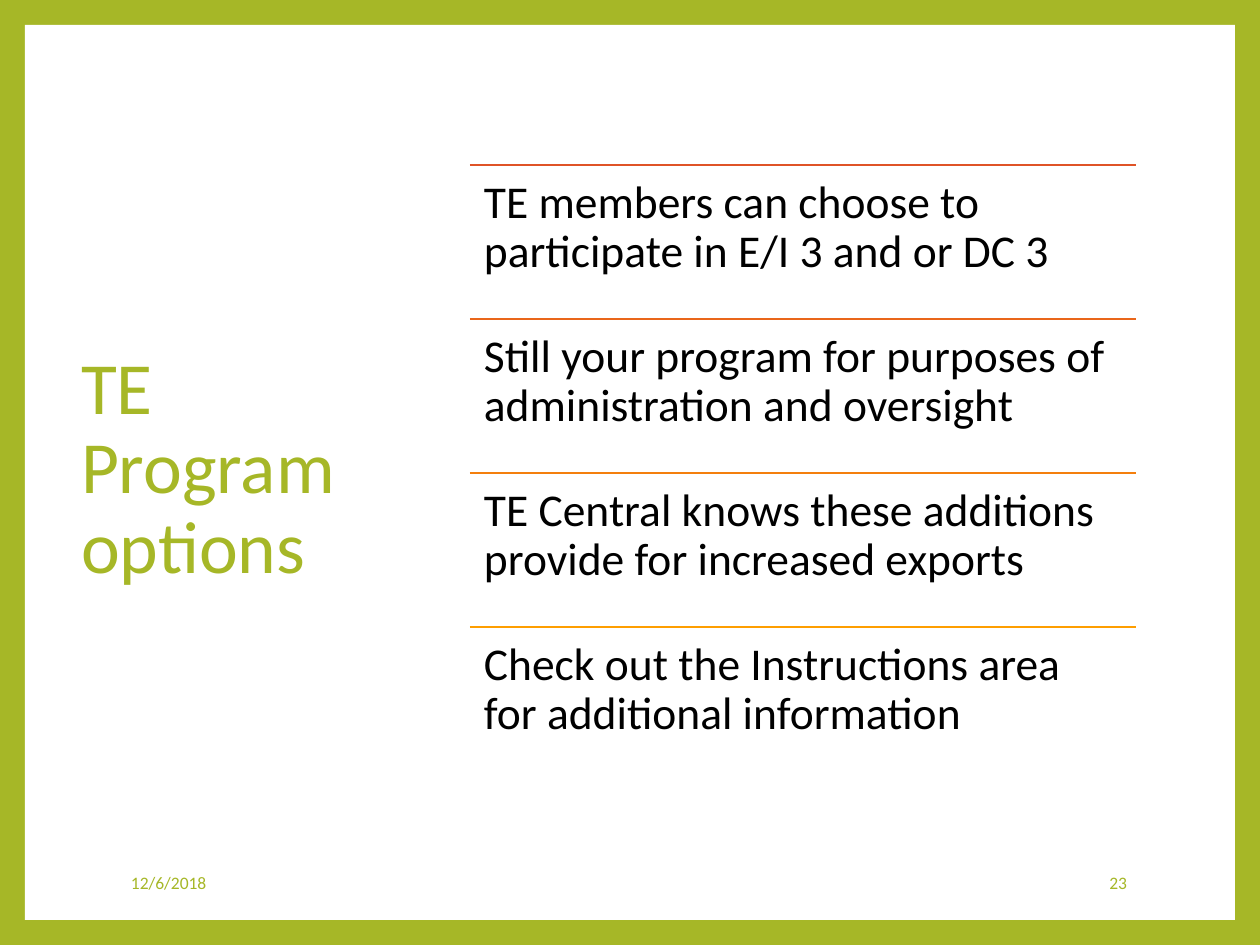
from dataclasses import dataclass

from lxml import etree
from pptx import Presentation
from pptx.dml.color import RGBColor
from pptx.enum.shapes import MSO_CONNECTOR, MSO_SHAPE
from pptx.enum.text import MSO_ANCHOR, MSO_AUTO_SIZE, PP_ALIGN
from pptx.oxml.ns import qn
from pptx.util import Pt

STRAIGHT = MSO_CONNECTOR.STRAIGHT
RECTANGLE = MSO_SHAPE.RECTANGLE
TOP, MIDDLE = MSO_ANCHOR.TOP, MSO_ANCHOR.MIDDLE
LEFT, RIGHT = PP_ALIGN.LEFT, PP_ALIGN.RIGHT
NO_AUTOFIT = MSO_AUTO_SIZE.NONE
TITLE_ONLY = 5
EMU_PER_PX = 914400 / 126


@dataclass(frozen=True)
class Theme:
    font: str = "Calibri"
    green: str = "A6B727"
    white: str = "FFFFFF"
    black: str = "000000"
    title_size: int = 42
    option_size: int = 26
    footer_size: int = 10
    rule_width: float = 1.5


THEME = Theme()

OPTIONS = (
    ("DF5327", "TE members can choose to participate in E/I 3 and or DC 3"),
    ("E9661A", "Still your program for purposes of administration and oversight"),
    ("F47F0D", "TE Central knows these additions provide for increased exports"),
    ("FE9E00", "Check out the Instructions area for additional information"),
)
OPTIONS_LEFT, OPTIONS_TOP, OPTIONS_WIDTH = 470, 165, 666
OPTION_HEIGHT = 154


def px(length):
    return round(length * EMU_PER_PX)


def color(value):
    return RGBColor.from_string(value)


def write_text(box, text, size, ink, anchor=MIDDLE, align=LEFT, inset=13,
               line_spacing=1.0, space_after=0):
    frame = box.text_frame
    frame.word_wrap = True
    frame.auto_size = NO_AUTOFIT
    frame.vertical_anchor = anchor
    frame.margin_left = frame.margin_right = px(inset)
    frame.margin_top = frame.margin_bottom = px(inset if anchor == TOP else 6)
    para = frame.paragraphs[0]
    para.alignment = align
    para.line_spacing = line_spacing
    para.space_after = Pt(space_after)
    span = para.add_run()
    span.text = text
    span.font.name = THEME.font
    span.font.size = Pt(size)
    span.font.color.rgb = color(ink)


def add_text(page, left, top, width, height, *content, **layout):
    box = page.shapes.add_textbox(px(left), px(top), px(width), px(height))
    write_text(box, *content, **layout)


def add_rule(page, left, top, width, ink):
    rule = page.shapes.add_connector(
        STRAIGHT, px(left), px(top), px(left + width), px(top))
    rule.line.color.rgb = color(ink)
    rule.line.width = Pt(THEME.rule_width)
    etree.SubElement(rule._element.spPr, qn("a:effectLst"))


def add_frame(page):
    """Green background with a white panel behind everything else."""
    background = page.background.fill
    background.solid()
    background.fore_color.rgb = color(THEME.green)
    panel = page.shapes.add_shape(RECTANGLE, px(25), px(25), px(1210), px(895))
    panel.shadow.inherit = False
    panel.fill.solid()
    panel.fill.fore_color.rgb = color(THEME.white)
    panel.line.fill.background()
    page.shapes.title._element.addprevious(panel._element)


def add_title(page, text):
    title = page.shapes.title
    title.left, title.top = px(68), px(84)
    title.width, title.height = px(348), px(772)
    write_text(title, text, THEME.title_size, THEME.green, line_spacing=0.9)


def add_options(page):
    for row, (ink, text) in enumerate(OPTIONS):
        top = OPTIONS_TOP + row * OPTION_HEIGHT
        add_rule(page, OPTIONS_LEFT, top, OPTIONS_WIDTH, ink)
        add_text(page, OPTIONS_LEFT, top, OPTIONS_WIDTH, OPTION_HEIGHT,
                 text, THEME.option_size, THEME.black,
                 anchor=TOP, inset=14, line_spacing=0.9, space_after=9)


def add_footer(page, date, number):
    for left, width, text, align in ((118, 241, date, LEFT),
                                     (964, 176, number, RIGHT)):
        add_text(page, left, 858, width, 50, text, THEME.footer_size,
                 THEME.green, align=align, space_after=6)


def main():
    deck = Presentation()
    deck.slide_width, deck.slide_height = px(1260), px(945)
    page = deck.slides.add_slide(deck.slide_layouts[TITLE_ONLY])
    add_frame(page)
    add_title(page, "TE Program options")
    add_options(page)
    add_footer(page, "12/6/2018", "23")
    deck.save("out.pptx")


if __name__ == "__main__":
    main()
